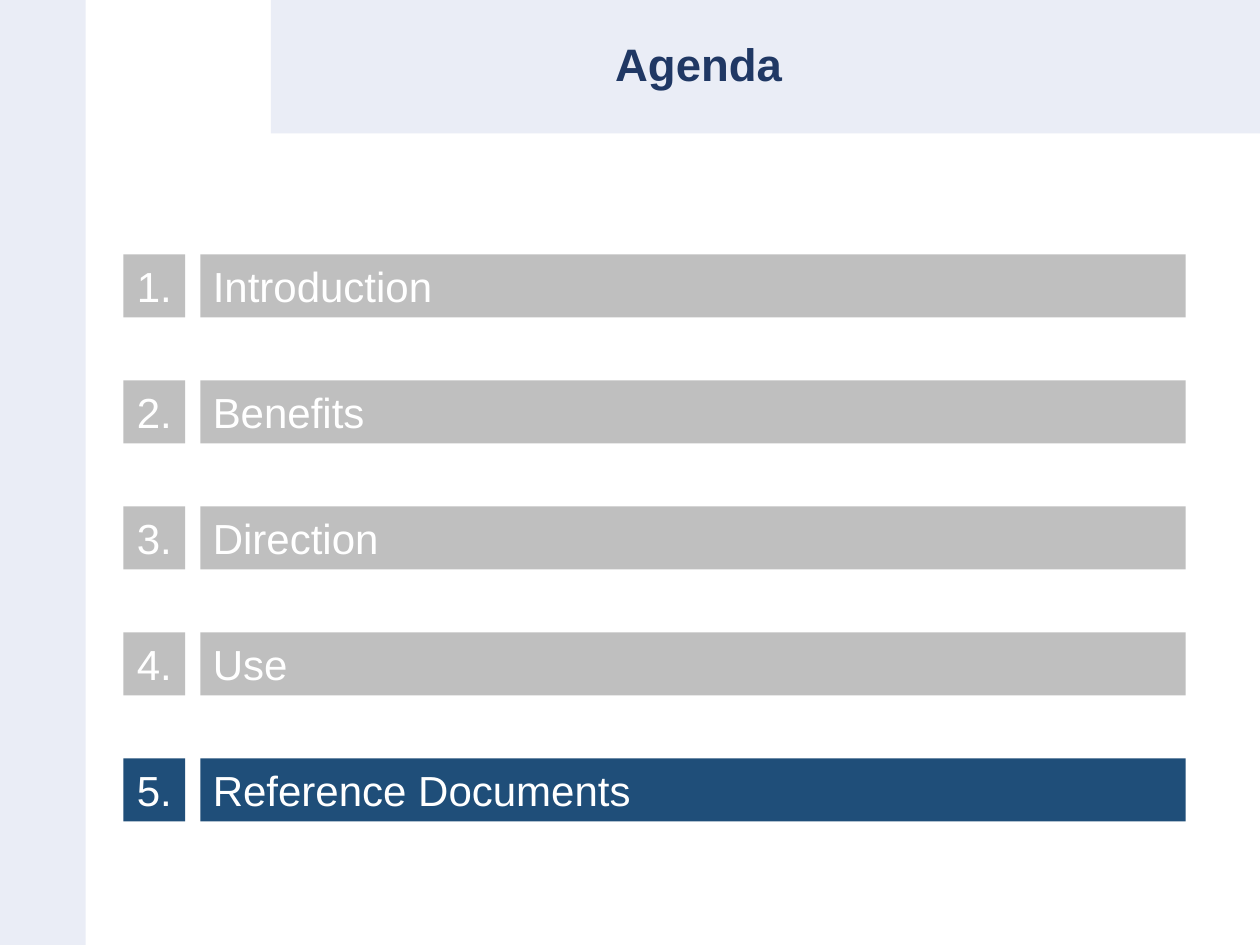
from dataclasses import dataclass

from pptx import Presentation
from pptx.dml.color import RGBColor
from pptx.enum.shapes import MSO_SHAPE
from pptx.enum.text import MSO_ANCHOR, PP_ALIGN
from pptx.shapes.autoshape import Shape
from pptx.slide import Slide
from pptx.text.text import TextFrame
from pptx.util import Inches, Pt

RECTANGLE = MSO_SHAPE.RECTANGLE
MIDDLE = MSO_ANCHOR.MIDDLE
LEFT, CENTER = PP_ALIGN.LEFT, PP_ALIGN.CENTER


@dataclass(frozen=True)
class Theme:
    font: str = "Arial"
    heading_size: int = 26
    topic_size: int = 24
    band: str = "EAEDF6"
    heading: str = "203864"
    inactive: str = "BFBFBF"
    active: str = "1F4E79"
    topic: str = "FFFFFF"


@dataclass(frozen=True)
class Box:
    left: float
    top: float
    width: float
    height: float

    def emu(self) -> list[int]:
        return [Inches(v) for v in (self.left, self.top, self.width, self.height)]


@dataclass(frozen=True)
class Topic:
    title: str
    current: bool = False


THEME = Theme()
SLIDE_WIDTH, SLIDE_HEIGHT = 10, 7.5

# Page frame
BAND_WIDTH, HEADER_LEFT, HEADER_HEIGHT = 0.68, 2.15, 1.06
SIDE_BAND = Box(0, 0, BAND_WIDTH, SLIDE_HEIGHT)
HEADER_BAND = Box(HEADER_LEFT, 0, SLIDE_WIDTH - HEADER_LEFT, HEADER_HEIGHT)
HEADING = Box(1.59, 0, 7.91, HEADER_HEIGHT)

# Agenda grid: a number column, a title column and evenly spaced rows
NUMBER_LEFT, NUMBER_WIDTH = 0.98, 0.49
TITLE_LEFT, TITLE_WIDTH = 1.59, 7.82
FIRST_ROW, ROW_PITCH, ROW_HEIGHT = 2.02, 1, 0.5

TOPICS = (
    Topic("Introduction"),
    Topic("Benefits"),
    Topic("Direction"),
    Topic("Use"),
    Topic("Reference Documents", current=True),
)


def write(frame: TextFrame, text: str, size: int, color: str,
          align: PP_ALIGN, bold: bool = False, spacing: float = 1.0) -> None:
    frame.word_wrap = True
    frame.vertical_anchor = MIDDLE
    paragraph = frame.paragraphs[0]
    paragraph.alignment = align
    paragraph.line_spacing = spacing
    run = paragraph.add_run()
    run.text = text
    font_format = {"name": THEME.font, "size": Pt(size), "bold": bold}
    for attribute, value in font_format.items():
        setattr(run.font, attribute, value)
    run.font.color.rgb = RGBColor.from_string(color)


def add_bar(slide: Slide, box: Box, fill: str) -> Shape:
    bar = slide.shapes.add_shape(RECTANGLE, *box.emu())
    bar.shadow.inherit = False
    bar.fill.solid()
    bar.fill.fore_color.rgb = RGBColor.from_string(fill)
    bar.line.fill.background()
    return bar


def add_topic(slide: Slide, row: int, topic: Topic) -> None:
    top = FIRST_ROW + row * ROW_PITCH
    fill = THEME.active if topic.current else THEME.inactive
    cells = (
        (TITLE_LEFT, TITLE_WIDTH, topic.title, LEFT),
        (NUMBER_LEFT, NUMBER_WIDTH, f"{row + 1}.", CENTER),
    )
    for left, width, text, align in cells:
        bar = add_bar(slide, Box(left, top, width, ROW_HEIGHT), fill)
        write(bar.text_frame, text, THEME.topic_size, THEME.topic, align)


def main() -> None:
    deck = Presentation()
    deck.slide_width, deck.slide_height = Inches(SLIDE_WIDTH), Inches(SLIDE_HEIGHT)
    slide = deck.slides.add_slide(deck.slide_layouts[6])

    # Background bands
    for band in (SIDE_BAND, HEADER_BAND):
        add_bar(slide, band, THEME.band)

    # Heading
    heading = slide.shapes.add_textbox(*HEADING.emu())
    write(heading.text_frame, "Agenda", THEME.heading_size, THEME.heading,
          CENTER, bold=True, spacing=0.9)

    # Agenda rows
    for row, topic in enumerate(TOPICS):
        add_topic(slide, row, topic)

    deck.save("out.pptx")


if __name__ == "__main__":
    main()
